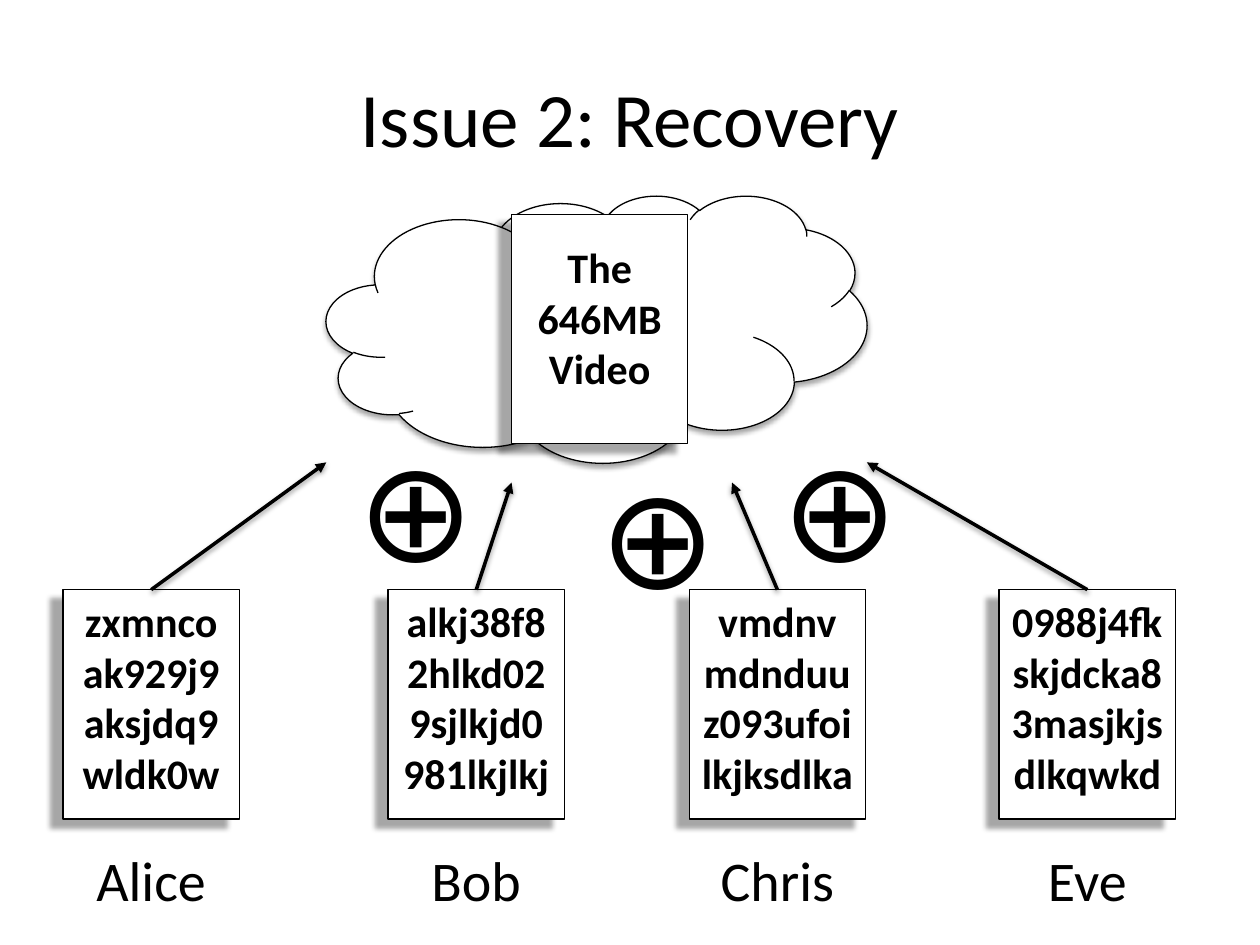
from dataclasses import dataclass

from lxml import etree
from pptx import Presentation
from pptx.dml.color import RGBColor
from pptx.enum import shapes, text
from pptx.oxml import ns
from pptx.util import Pt


@dataclass(frozen=True)
class Theme:
    ink: RGBColor = RGBColor(0, 0, 0)
    paper: RGBColor = RGBColor(255, 255, 255)
    font: str = "Calibri"
    title: float = 44
    name: float = 32
    body: float = 24
    symbol: float = 80
    outline: float = 0.75
    arrow: float = 2


THEME = Theme()
CARD_WIDTH, CARD_HEIGHT = 100.8, 131.04
CARD_SHADOW = dict(alpha=35, distance=8.8, angle=145)
CLOUD_SHADOW = dict(alpha=35, distance=1.8, angle=90)
ARROW_SHADOW = dict(alpha=38, distance=1.6, angle=90)


def add_child(parent, tag, **attributes):
    return etree.SubElement(parent, ns.qn(tag), {k: str(v) for k, v in attributes.items()})


def add_shadow(item, alpha, distance, angle):
    effects = add_child(item._element.spPr, "a:effectLst")
    shadow = add_child(effects, "a:outerShdw", blurRad=Pt(3.1), dist=Pt(distance),
                       dir=angle * 60000, rotWithShape=0)
    color = add_child(shadow, "a:srgbClr", val=THEME.ink)
    add_child(color, "a:alpha", val=alpha * 1000)


def add_text(slide, box, words, size, bold=False, align=text.PP_ALIGN.CENTER,
             anchor=text.MSO_ANCHOR.TOP):
    frame = slide.shapes.add_textbox(*map(Pt, box)).text_frame
    frame.word_wrap = True
    frame.vertical_anchor = anchor
    paragraph = frame.paragraphs[0]
    paragraph.alignment = align
    run = paragraph.add_run()
    run.text = words
    run.font.name = THEME.font
    run.font.size = Pt(size)
    run.font.bold = bold
    run.font.color.rgb = THEME.ink


def add_panel(slide, preset, box, shadow):
    panel = slide.shapes.add_shape(preset, *map(Pt, box))
    panel.fill.solid()
    panel.fill.fore_color.rgb = THEME.paper
    panel.line.color.rgb = THEME.ink
    panel.line.width = Pt(THEME.outline)
    add_shadow(panel, **shadow)


def add_card(slide, left, top, words, text_top=0):
    add_panel(slide, shapes.MSO_SHAPE.RECTANGLE, (left, top, CARD_WIDTH, CARD_HEIGHT), CARD_SHADOW)
    add_text(slide, (left, top + text_top, CARD_WIDTH, CARD_HEIGHT - 7.2 - text_top),
             words, THEME.body, bold=True)


def add_arrow(slide, start, end):
    arrow = slide.shapes.add_connector(shapes.MSO_CONNECTOR.STRAIGHT, *map(Pt, (*start, *end)))
    arrow.line.color.rgb = THEME.ink
    arrow.line.width = Pt(THEME.arrow)
    add_child(arrow.line._get_or_add_ln(), "a:tailEnd", type="triangle")
    add_shadow(arrow, **ARROW_SHADOW)


def add_participant(slide, left, top, name, share, target):
    add_card(slide, left, top, share)
    add_text(slide, (left, top + 142.56, CARD_WIDTH, 46), name, THEME.name)
    add_arrow(slide, (left + CARD_WIDTH / 2, top), target)


def add_cloud(slide, left, top, width, height):
    add_panel(slide, shapes.MSO_SHAPE.CLOUD, (left, top, width, height), CLOUD_SHADOW)
    add_card(slide, left + 105.84, top + 10.8, "The 646MB Video", text_top=12.24)


def add_xor_signs(slide, left, top):
    for across, down in ((0, 0), (138.24, 15.12), (241.92, 0)):
        add_text(slide, (left + across, top + down, 49.68, 200.88), "⊕", THEME.symbol,
                 align=text.PP_ALIGN.LEFT)


def build_recovery_slide(slide):
    add_text(slide, (36, 21.6, 648, 90), "Issue 2: Recovery", THEME.title,
             anchor=text.MSO_ANCHOR.MIDDLE)
    participants = (
        (36, "Alice", "zxmncoak929j9aksjdq9wldk0w", (186.48, 264.24)),
        (221.76, "Bob", "alkj38f82hlkd029sjlkjd0981lkjlkj", (292.32, 275.76)),
        (393.84, "Chris", "vmdnvmdnduuz093ufoilkjksdlka", (418.32, 275.76)),
        (570.96, "Eve", "0988j4fkskjdcka83masjkjsdlkqwkd", (495.36, 264.24)),
    )
    for left, name, share, target in participants:
        add_participant(slide, left, 336.96, name, share, target)
    add_cloud(slide, 186.48, 111.6, 308.88, 152.64)
    add_xor_signs(slide, 197.28, 237.6)


def main():
    deck = Presentation()
    deck.slide_width, deck.slide_height = Pt(720), Pt(540)
    build_recovery_slide(deck.slides.add_slide(deck.slide_layouts[6]))
    deck.save("out.pptx")


if __name__ == "__main__":
    main()
